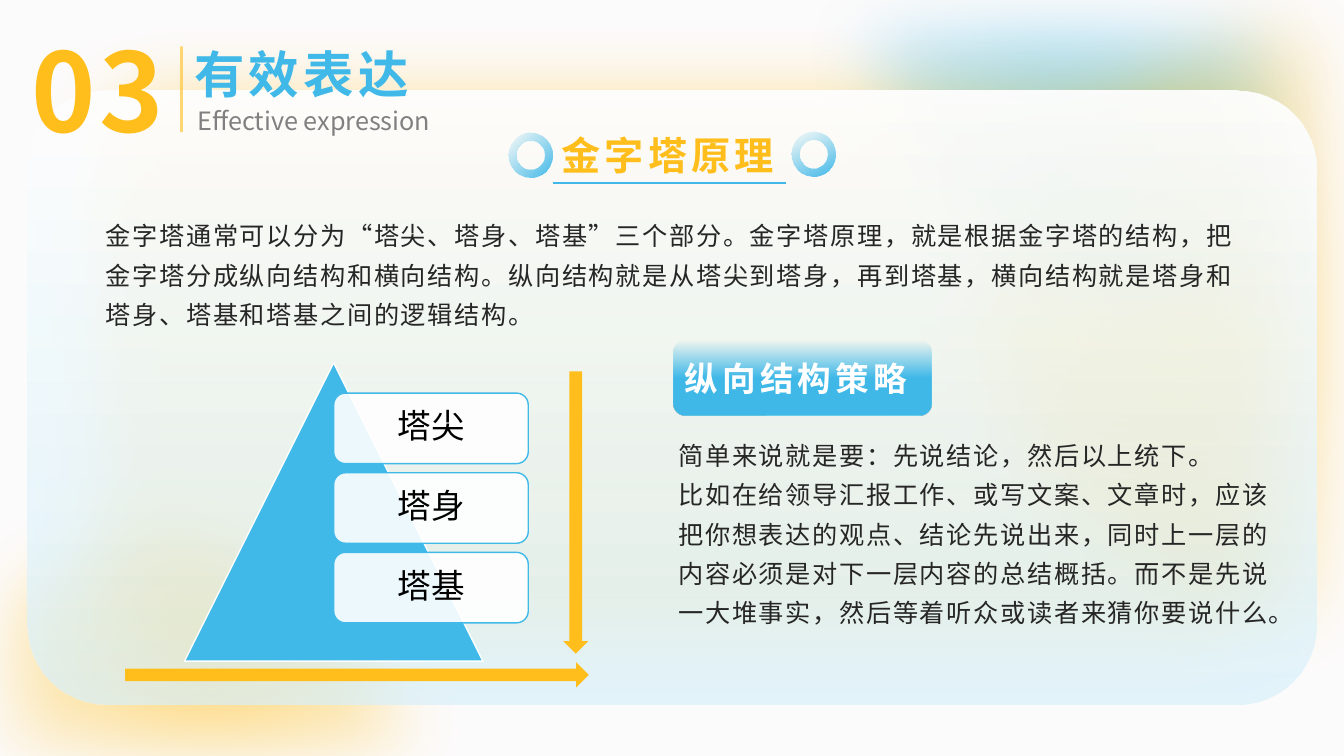
from lxml import etree
from pptx import Presentation
from pptx import util as u
from pptx.dml.color import RGBColor
from pptx.enum import shapes, text
from pptx.oxml import parse_xml
from pptx.oxml.ns import nsdecls, qn

PX = 9144
FONT = "Noto Sans CJK SC"
GOLD, BLUE, WHITE, INK = "FFBE1C", "40B9E9", "FFFFFF", "262626"
KIND, ALIGN = shapes.MSO_SHAPE, text.PP_ALIGN

deck = Presentation()
deck.slide_width, deck.slide_height = u.Emu(1333 * PX), u.Emu(750 * PX)
slide = deck.slides.add_slide(deck.slide_layouts[6])
slide.background.fill.solid()
slide.background.fill.fore_color.rgb = RGBColor.from_string("FCFBFB")
tree = slide.shapes


def paint(shape, stops, angle=None, line=None):
    shape.shadow.inherit = False
    tints = [f'<a:srgbClr val="{tint}"><a:alpha val="{alpha * 1000}"/></a:srgbClr>'
             for _, tint, alpha in stops]
    if len(stops) == 1:
        xml = f'<a:solidFill {nsdecls("a")}>{tints[0]}</a:solidFill>'
    else:
        marks = "".join(f'<a:gs pos="{stop[0] * 1000}">{tint}</a:gs>'
                        for stop, tint in zip(stops, tints))
        way = (f'<a:lin ang="{angle * 60000}" scaled="0"/>' if angle is not None else
               '<a:path path="circle"><a:fillToRect l="50000" t="50000" r="50000" b="50000"/></a:path>')
        xml = f'<a:gradFill {nsdecls("a")} rotWithShape="1"><a:gsLst>{marks}</a:gsLst>{way}</a:gradFill>'
    shape.fill.background()
    props = shape._element.spPr
    props.replace(props.find(qn("a:noFill")), parse_xml(xml))
    if line:
        shape.line.color.rgb = RGBColor.from_string(line)
        shape.line.width = u.Pt(1)
    else:
        shape.line.fill.background()


def write(spot, lines, size, tint, bold=False, gap=0, align=ALIGN.LEFT, lead=1.0):
    box = tree.add_textbox(*[n * PX for n in spot])
    frame = box.text_frame
    frame.word_wrap = True
    frame.text = lines
    for para in frame.paragraphs:
        para.alignment, para.line_spacing = align, lead
        for run in para.runs:
            font = run.font
            font.name, font.size, font.bold = FONT, u.Pt(size), bold
            font.color.rgb = RGBColor.from_string(tint)
            props = run._r.get_or_add_rPr()
            props.set("lang", "zh-CN")
            props.set("spc", str(gap))
            etree.SubElement(props, qn("a:ea")).set("typeface", FONT)
    return frame


blobs = [
    (GOLD, (-59, 527),
     [(-1, 473), (79, 439), (168, 439), (344, 439), (488, 574), (488, 740),
      (488, 761), (485, 781), (481, 801)],
     [(477, 814), (-67, 814), (-67, 541), (-71, 541)]),
    (GOLD, (1362, 687),
     [(1332, 695), (1301, 699), (1269, 699), (1061, 699), (893, 531), (893, 324),
      (893, 117), (1061, -51), (1269, -51), (1333, -51), (1394, -35), (1447, -6)],
     [(1457, 0), (1378, 0), (1378, 683)]),
    (BLUE, (1323, 331),
     [(1269, 359), (1209, 375), (1144, 375), (937, 375), (769, 211), (769, 9),
      (769, -4), (769, -16), (770, -29)],
     [(772, -41), (1333, -41), (1333, 325)]),
]
for tint, start, bends, ends in blobs:
    pen = tree.build_freeform(*start, scale=float(PX))
    pen.add_line_segments(bends + ends, close=True)
    blob = pen.convert_to_shape()
    steps = list(blob._element.iter(qn("a:lnTo")))[:len(bends)]
    for first in range(0, len(bends), 3):
        trio = steps[first:first + 3]
        curve = etree.Element(qn("a:cubicBezTo"))
        trio[0].addprevious(curve)
        for step in trio:
            curve.append(step[0])
            step.getparent().remove(step)
    paint(blob, [(0, tint, 60), (100, tint, 0)])
    glow = blob._element.spPr.find(qn("a:effectLst"))
    etree.SubElement(glow, qn("a:softEdge")).set("rad", "635000")

card = tree.add_shape(KIND.ROUNDED_RECTANGLE, 27 * PX, 90 * PX, 1279 * PX, 609 * PX)
card.adjustments[0] = 0.13
paint(card, [(0, WHITE, 95), (100, "D9F1FB", 70)], 90)
glow = card._element.spPr.find(qn("a:effectLst"))
glow.append(parse_xml(
    f'<a:outerShdw {nsdecls("a")} blurRad="635000" dist="50800" dir="0" sx="90000" sy="90000" '
    f'algn="t" rotWithShape="0">'
    f'<a:srgbClr val="{GOLD}"><a:alpha val="40000"/></a:srgbClr></a:outerShdw>'))

write((183, 38, 252, 71), "有效表达", 36, BLUE, True, 300, ALIGN.JUSTIFY)
write((8, 18, 178, 141), "03", 78, GOLD, True, 300, ALIGN.CENTER)
write((547, 125, 241, 57), "金字塔原理", 28, GOLD, True, 300, ALIGN.JUSTIFY)
write((95, 205, 1144, 125),
      "金字塔通常可以分为“塔尖、塔身、塔基”三个部分。金字塔原理，就是根据金字塔的结构，"
      "把金字塔分成纵向结构和横向结构。纵向结构就是从塔尖到塔身，再到塔基，"
      "横向结构就是塔身和塔身、塔基和塔基之间的逻辑结构。",
      18, INK, gap=120, lead=1.3)

tower = tree.add_shape(KIND.ISOSCELES_TRIANGLE, 183 * PX, 360 * PX, 296 * PX, 296 * PX)
paint(tower, [(0, BLUE, 100)], line=WHITE)
for row, name in enumerate(["塔尖", "塔身", "塔基"]):
    top = 390 + 79 * row
    tile = tree.add_shape(KIND.ROUNDED_RECTANGLE, 331 * PX, top * PX, 193 * PX, 70 * PX)
    paint(tile, [(0, WHITE, 90)], line=BLUE)
    label = write((335, top + 3, 186, 63), name, 24, "000000", align=ALIGN.CENTER, lead=0.9)
    label.vertical_anchor = text.MSO_ANCHOR.MIDDLE
    label.margin_top = label.margin_bottom = 10 * PX

for x, y, wide, turn in [(124, 657, 460, 0), (431, 496, 280, 90)]:
    arrow = tree.add_shape(KIND.RIGHT_ARROW, x * PX, y * PX, wide * PX, 25 * PX)
    arrow.rotation = turn
    paint(arrow, [(0, GOLD, 100)])

write((663, 423, 609, 243),
      "简单来说就是要：先说结论，然后以上统下。\n"
      "比如在给领导汇报工作、或写文案、文章时，应该把你想表达的观点、结论先说出来，"
      "同时上一层的内容必须是对下一层内容的总结概括。而不是先说一大堆事实，"
      "然后等着听众或读者来猜你要说什么。",
      18, INK, gap=120, lead=1.3)

badge = tree.add_shape(KIND.ROUNDED_RECTANGLE, 668 * PX, 338 * PX, 256 * PX, 74 * PX)
paint(badge, [(50, BLUE, 100), (100, BLUE, 0)], 270)
write((669, 350, 255, 50), "纵向结构策略", 24, WHITE, True, 300, ALIGN.JUSTIFY)
write((186, 100, 268, 40), "Effective expression", 18, "808080", align=ALIGN.JUSTIFY)

for x, y, turn in [(504, 132, 0), (785, 131, 17)]:
    ring = tree.add_shape(KIND.DONUT, x * PX, y * PX, 44 * PX, 44 * PX)
    ring.adjustments[0] = 0.19
    ring.rotation = turn
    paint(ring, [(0, BLUE, 0), (100, BLUE, 100)], 45)

rules = [(180, 46, 180, 131, GOLD, 2, 60), (548, 182, 780, 182, BLUE, 1.5, 100)]
for *ends, tint, width, alpha in rules:
    rule = tree.add_connector(shapes.MSO_CONNECTOR.STRAIGHT, *[n * PX for n in ends])
    rule.line.color.rgb = RGBColor.from_string(tint)
    rule.line.width = u.Pt(width)
    props = rule._element.spPr
    shade = props.find(".//" + qn("a:srgbClr"))
    etree.SubElement(shade, qn("a:alpha")).set("val", str(alpha * 1000))
    etree.SubElement(props, qn("a:effectLst"))

deck.save("out.pptx")
